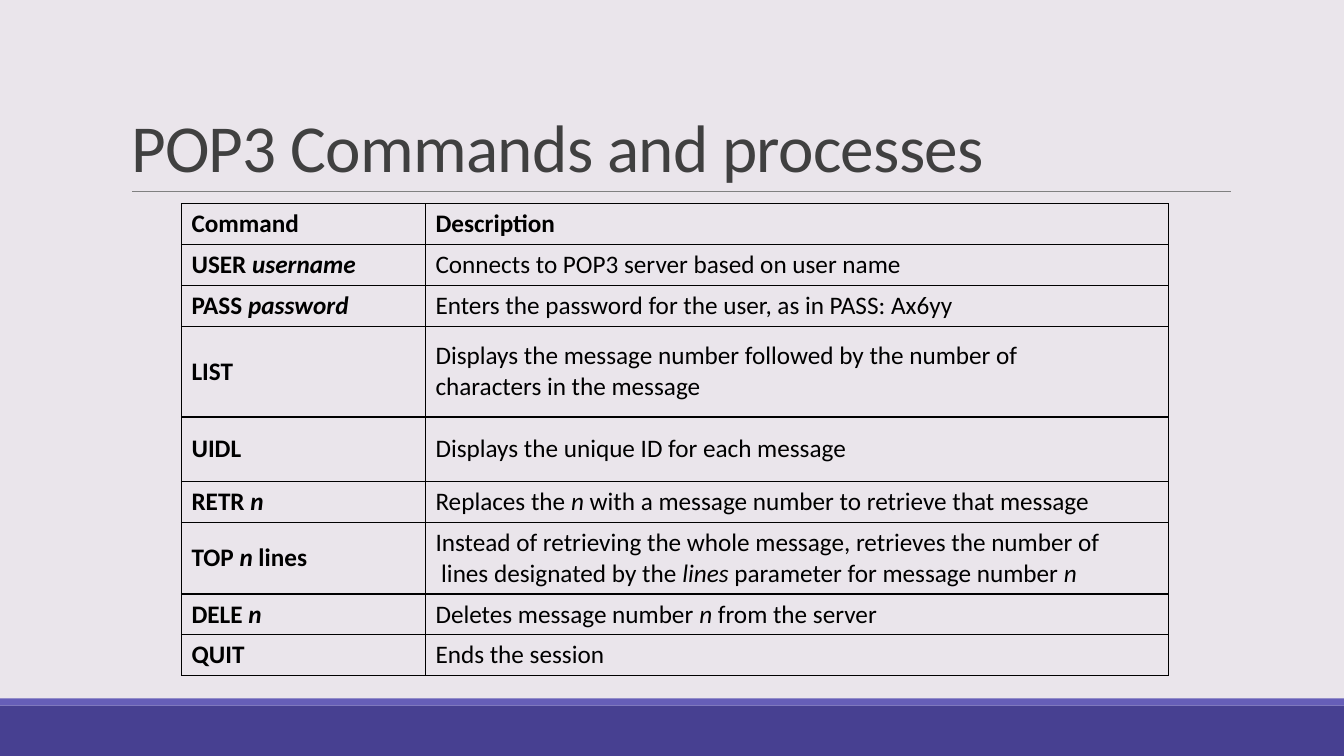
from dataclasses import dataclass

from lxml import etree
from pptx import Presentation
from pptx.dml.color import RGBColor
from pptx.enum import shapes, text
from pptx.oxml.ns import qn
from pptx.util import Inches, Pt

TITLE = "POP3 Commands and processes"
ROWS = [
    ("Command", "*Description*"),
    ("USER _username_", "Connects to POP3 server based on user name"),
    ("PASS _password_", "Enters the password for the user, as in PASS: Ax6yy"),
    ("LIST", "Displays the message number followed by the number of\n"
             "characters in the message"),
    ("UIDL", "Displays the unique ID for each message"),
    ("RETR _n_", "Replaces the _n_ with a message number to retrieve that message"),
    ("TOP _n_ lines", "Instead of retrieving the whole message, retrieves the number of\n"
                      " lines designated by the _lines_ parameter for message number _n_"),
    ("DELE _n_", "Deletes message number _n_ from the server"),
    ("QUIT", "Ends the session"),
]
COLUMN_WIDTHS = (2.42, 7.37)
ROW_HEIGHT = 0.39
TALL_ROWS = {"LIST": 0.9, "UIDL": 0.64, "TOP _n_ lines": 0.64}


@dataclass(frozen=True)
class Theme:
    font: str = "Calibri"
    title_size: float = 48
    cell_size: float = 18
    background: str = "EAE5EB"
    band: str = "474091"
    stripe: str = "665EB8"
    rule: str = "808080"
    title: str = "404040"
    ink: str = "000000"


THEME = Theme()


def rgb(value):
    return RGBColor.from_string(value)


def style_font(font, size, color):
    font.name = THEME.font
    font.size = Pt(size)
    font.color.rgb = rgb(color)


def add_band(slide, top, height, color):
    sp = slide.shapes.add_shape(shapes.MSO_SHAPE.RECTANGLE, 0, Inches(top),
                                Inches(13.33), Inches(height))
    sp.shadow.inherit = False
    sp.fill.solid()
    sp.fill.fore_color.rgb = rgb(color)
    sp.line.fill.background()


def add_title(slide):
    sp = slide.shapes.title
    sp.left, sp.top, sp.width, sp.height = map(Inches, (1.2, 0.31, 11, 1.59))
    tf = sp.text_frame
    tf.text = TITLE
    tf.word_wrap = True
    tf.auto_size = text.MSO_AUTO_SIZE.NONE
    tf.vertical_anchor = text.MSO_ANCHOR.BOTTOM
    p = tf.paragraphs[0]
    p.alignment = text.PP_ALIGN.LEFT
    p.line_spacing = 0.85
    style_font(p.font, THEME.title_size, THEME.title)
    p.runs[0].font._element.set("spc", "-50")


def add_rule(slide):
    line = slide.shapes.add_connector(shapes.MSO_CONNECTOR.STRAIGHT, Inches(1.31),
                                      Inches(1.9), Inches(12.21), Inches(1.9))
    line.line.color.rgb = rgb(THEME.rule)
    line.line.width = Pt(0.5)
    etree.SubElement(line._element.spPr, qn("a:effectLst"))


def add_borders(cell):
    tc_pr = cell._tc.get_or_add_tcPr()
    for position, side in enumerate(("lnL", "lnR", "lnT", "lnB")):
        ln = etree.Element(qn(f"a:{side}"), w=str(Pt(1)))
        fill = etree.SubElement(ln, qn("a:solidFill"))
        etree.SubElement(fill, qn("a:srgbClr"), val=THEME.ink)
        tc_pr.insert(position, ln)


def fill_cell(cell, content, bold):
    cell.fill.background()
    cell.vertical_anchor = text.MSO_ANCHOR.MIDDLE
    add_borders(cell)
    tf = cell.text_frame
    for i, line in enumerate(content.split("\n")):
        p = tf.add_paragraph() if i else tf.paragraphs[0]
        style_font(p.font, THEME.cell_size, THEME.ink)
        p.font.bold = bold
        p_pr = p._p.get_or_add_pPr()
        p_pr.set("marL", str(Inches(0.38)))
        p_pr.set("indent", str(Inches(-0.38)))
        for part, words in enumerate(line.split("_")):
            if words:
                r = p.add_run()
                r.text = words
                r.font.italic = part % 2 == 1


def add_commands(slide):
    heights = [TALL_ROWS.get(command, ROW_HEIGHT) for command, _ in ROWS]
    table = slide.shapes.add_table(len(ROWS), len(COLUMN_WIDTHS), Inches(1.8), Inches(2.02),
                                   Inches(sum(COLUMN_WIDTHS)), Inches(sum(heights))).table
    table.first_row = table.horz_banding = False
    for column, width in zip(table.columns, COLUMN_WIDTHS):
        column.width = Inches(width)
    for i, (row, height) in enumerate(zip(ROWS, heights)):
        table.rows[i].height = Inches(height)
        for j, content in enumerate(row):
            fill_cell(table.cell(i, j), content.strip("*"), i == 0 or j == 0)


def main():
    prs = Presentation()
    prs.slide_width, prs.slide_height = Inches(13.33), Inches(7.5)
    slide = prs.slides.add_slide(prs.slide_layouts[5])
    slide.background.fill.solid()
    slide.background.fill.fore_color.rgb = rgb(THEME.background)
    add_band(slide, 7, 0.5, THEME.band)
    add_band(slide, 6.93, 0.07, THEME.stripe)
    add_rule(slide)
    add_title(slide)
    add_commands(slide)
    prs.save("out.pptx")


if __name__ == "__main__":
    main()
